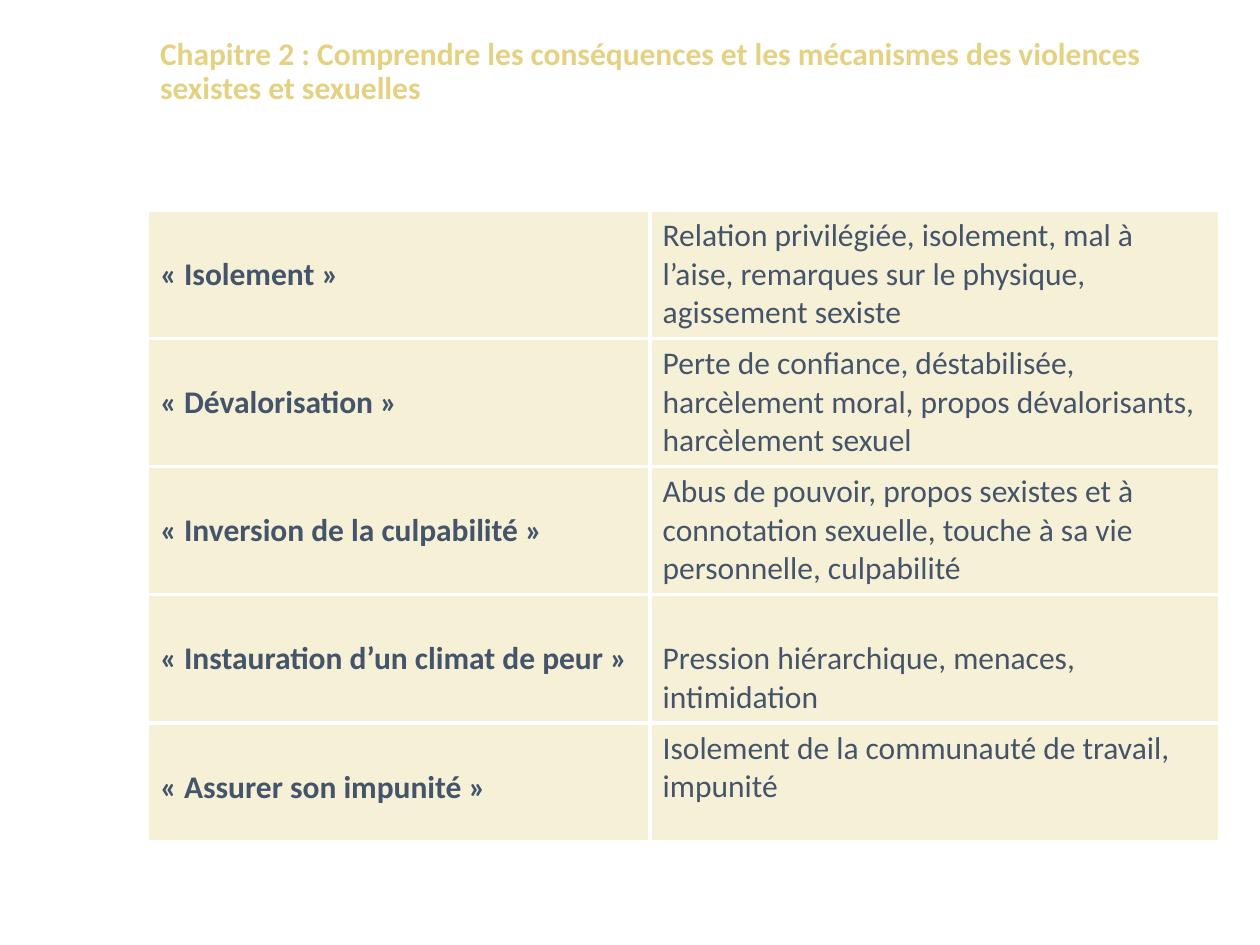
from lxml import etree
from pptx import Presentation
from pptx.dml.color import RGBColor
from pptx.enum import text
from pptx.oxml import ns
from pptx.util import Inches, Pt

GOLD, SLATE, WHITE = "E5D182", "44546A", "FFFFFF"
FILL_OPACITY = 32
TOP_MARGIN = 0.05
LOWERED_MARGIN = 0.36  # starts the text on the second line of the row

ROWS = [
    ("« Isolement »",
     "Relation privilégiée, isolement, mal à l’aise, remarques sur le physique, agissement sexiste",
     TOP_MARGIN),
    ("« Dévalorisation »",
     "Perte de confiance, déstabilisée, harcèlement moral, propos dévalorisants, harcèlement sexuel",
     TOP_MARGIN),
    ("« Inversion de la culpabilité »",
     "Abus de pouvoir, propos sexistes et à connotation sexuelle, touche à sa vie personnelle, culpabilité",
     TOP_MARGIN),
    ("« Instauration d’un climat de peur »",
     "Pression hiérarchique, menaces, intimidation",
     LOWERED_MARGIN),
    ("« Assurer son impunité »",
     "Isolement de la communauté de travail, impunité",
     TOP_MARGIN),
]


def format_paragraph(paragraph, color, bold):
    paragraph.alignment = text.PP_ALIGN.LEFT
    paragraph.font.name = "Calibri"
    paragraph.font.size = Pt(18)
    paragraph.font.bold = bold
    paragraph.font.color.rgb = RGBColor.from_string(color)


def format_cell(cell):
    """Give the cell white borders and a translucent gold fill."""
    properties = cell._tc.get_or_add_tcPr()
    for side in ("lnL", "lnR", "lnT", "lnB"):
        line = etree.SubElement(properties, ns.qn(f"a:{side}"), w=str(Pt(2.25)))
        line_fill = etree.SubElement(line, ns.qn("a:solidFill"))
        etree.SubElement(line_fill, ns.qn("a:srgbClr"), val=WHITE)
    cell.fill.solid()
    cell.fill.fore_color.rgb = RGBColor.from_string(GOLD)
    color = properties.find(ns.qn("a:solidFill")).find(ns.qn("a:srgbClr"))
    etree.SubElement(color, ns.qn("a:alpha"), val=str(FILL_OPACITY * 1000))


presentation = Presentation()
presentation.slide_width, presentation.slide_height = Inches(10), Inches(7.5)
slide = presentation.slides.add_slide(presentation.slide_layouts[5])

title = slide.shapes.title
title.left, title.top = Inches(1.17), Inches(0.4)
title.width, title.height = Inches(8.69), Inches(0.35)
title.text_frame.text = (
    "Chapitre 2 : Comprendre les conséquences et les mécanismes des violences sexistes et sexuelles"
)
title.text_frame.word_wrap = True
title.text_frame.auto_size = text.MSO_AUTO_SIZE.NONE
title.text_frame.vertical_anchor = text.MSO_ANCHOR.MIDDLE
title.text_frame.paragraphs[0].line_spacing = 0.9
format_paragraph(title.text_frame.paragraphs[0], GOLD, True)

table = slide.shapes.add_table(
    len(ROWS), 2, Inches(1.17), Inches(1.67), Inches(8.51), Inches(4.7)
).table
table.first_row = table.horz_banding = False
table.columns[0].width, table.columns[1].width = Inches(3.99), Inches(4.52)

for row, (mechanism, effects, effects_margin) in zip(table.rows, ROWS):
    row.height = Inches(0.94)
    contents = [(mechanism, True, LOWERED_MARGIN), (effects, False, effects_margin)]
    for cell, (words, bold, margin) in zip(row.cells, contents):
        cell.text = words
        cell.margin_top = Inches(margin)
        format_paragraph(cell.text_frame.paragraphs[0], SLATE, bold)
        format_cell(cell)

presentation.save("out.pptx")
